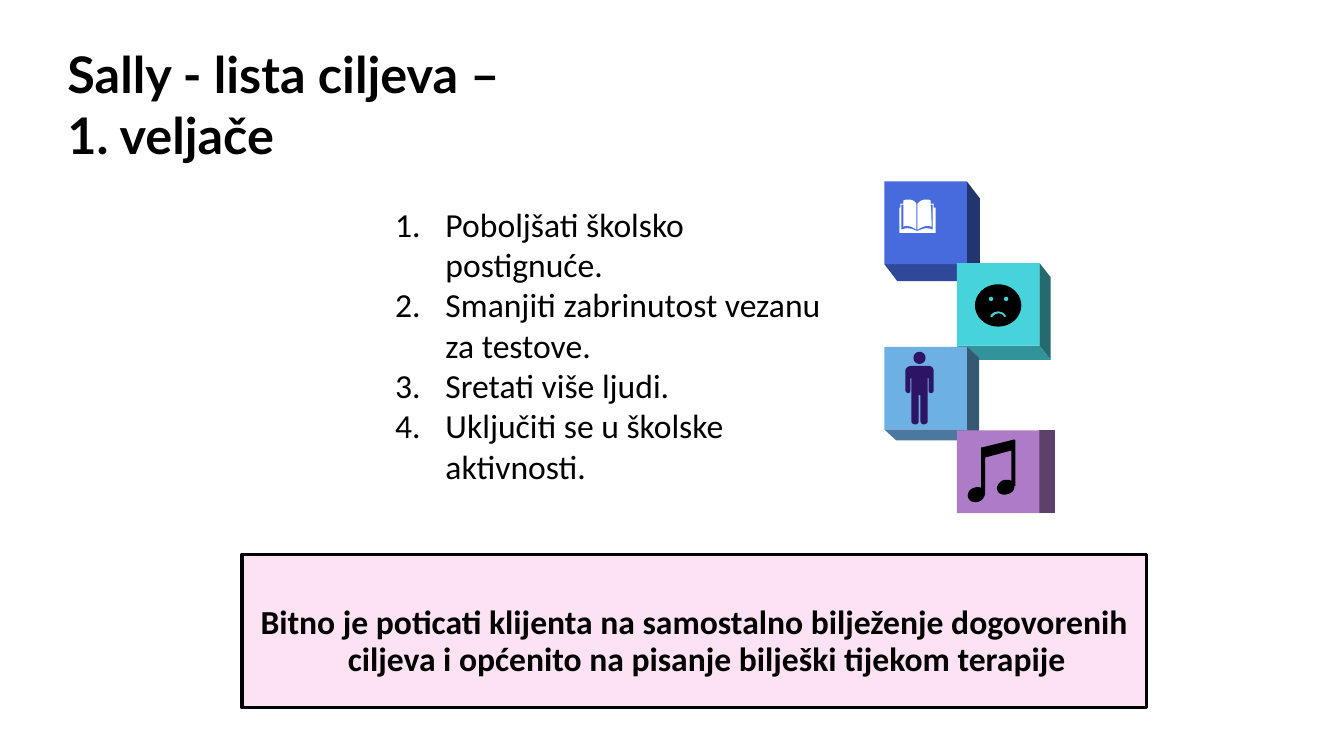
from math import cos, pi, sin

from lxml import etree
from pptx import Presentation
from pptx.dml.color import RGBColor
from pptx.enum.shapes import MSO_SHAPE
from pptx.enum.text import MSO_ANCHOR, PP_ALIGN
from pptx.oxml.ns import qn
from pptx.util import Inches, Pt

RECTANGLE = MSO_SHAPE.RECTANGLE
CENTER = PP_ALIGN.CENTER
MIDDLE = MSO_ANCHOR.MIDDLE

BLACK = RGBColor(0x00, 0x00, 0x00)
WHITE = RGBColor(0xFF, 0xFF, 0xFF)
PINK = RGBColor(0xFC, 0xE2, 0xF3)
INDIGO = RGBColor(0x2D, 0x14, 0x64)
BLUE = RGBColor(0x47, 0x6A, 0xDD)
BLUE_SIDE = RGBColor(0x22, 0x35, 0x6E)
BLUE_BASE = RGBColor(0x30, 0x48, 0x9A)
TEAL = RGBColor(0x47, 0xD3, 0xDC)
TEAL_SIDE = RGBColor(0x24, 0x6A, 0x6E)
TEAL_BASE = RGBColor(0x32, 0x94, 0x9A)
SKY = RGBColor(0x6D, 0xB0, 0xE4)
SKY_SIDE = RGBColor(0x36, 0x58, 0x72)
SKY_BASE = RGBColor(0x4A, 0x78, 0x9E)
PURPLE = RGBColor(0xAE, 0x7B, 0xC9)
PURPLE_SIDE = RGBColor(0x5C, 0x41, 0x6A)

CUBE_SIZE = 0.82
UNITS_PER_INCH = 1000
CURVE_STEPS = 8

GOALS = [
    "Poboljšati školsko postignuće.",
    "Smanjiti zabrinutost vezanu za testove.",
    "Sretati više ljudi.",
    "Uključiti se u školske aktivnosti.",
]


# Outlines, in hundredths of an inch: pairs are corners, sixes are Bézier curves
def ellipse(center_x, center_y, radius_x, radius_y, steps=48):
    angles = [2 * pi * step / steps for step in range(steps)]
    return [(center_x + radius_x * cos(a), center_y + radius_y * sin(a)) for a in angles]


BOOK = [[
    (17, 31), (18, 31), (24, 29, 27, 27, 33, 30), (33, 5), (31, 5),
    (32, 13, 32, 20, 32, 27), (27, 25, 23, 27, 18, 30), (18, 4),
    (21, 1, 23, 0, 27, 0), (28, 0, 30, 0, 31, 1), (31, 4), (34, 4), (34, 8),
    (36, 8), (36, 33), (0, 33), (0, 8), (1, 8), (1, 4), (4, 4), (4, 1),
    (6, 0, 8, 0, 9, 0), (12, 0, 15, 1, 17, 4), (17, 30),
    (13, 27, 8, 25, 4, 27), (4, 5), (2, 5), (2, 30), (8, 27, 12, 29, 17, 31),
]]
SAD_FACE = [
    ellipse(23, 21, 23, 21),
    ellipse(16, 14.5, 2.2, 2.2),
    ellipse(31, 14.5, 2.2, 2.2),
    [(23, 27), (19, 27, 16, 29, 15, 32), (17, 33), (18, 31, 21, 29, 23, 29),
     (26, 29, 28, 30, 29, 33), (31, 32), (30, 29, 27, 27, 23, 27)],
]
PERSON = [
    [(6, 14), (23, 14), (26, 14, 28, 16, 28, 19), (28, 38),
     (28, 40, 27, 41, 25, 41), (24, 41, 23, 40, 23, 38), (23, 26), (22, 26),
     (22, 69), (22, 71, 20, 72, 18, 72), (17, 72, 15, 71, 15, 69), (15, 43),
     (13, 43), (13, 69), (13, 71, 12, 72, 10, 72), (8, 72, 6, 71, 6, 69),
     (6, 26), (5, 26), (5, 38), (5, 40, 4, 41, 3, 41),
     (2, 41, 0, 40, 0, 38), (0, 19), (0, 16, 3, 14, 6, 14)],
    ellipse(14, 6, 6, 6),
]
MUSIC_NOTE = [[
    (47, 0), (48, 1), (48, 46), (47, 46), (48, 49, 45, 53, 41, 54),
    (36, 56, 31, 54, 30, 50), (29, 46, 32, 42, 37, 40),
    (39, 40, 42, 40, 44, 41), (44, 11), (18, 18), (18, 53),
    (18, 57, 15, 61, 11, 62), (6, 63, 2, 61, 1, 57), (0, 53, 3, 49, 7, 48),
    (10, 47, 12, 47, 14, 48), (14, 8), (15, 8),
]]

# Cubes: left, top, depth right, depth down, front, side and base colour,
# then the icon with its offset and colour
CUBES = [
    (8.77, 1.8, 0.13, 0.17, BLUE, BLUE_SIDE, BLUE_BASE, BOOK, 0.15, 0.18, WHITE),
    (9.49, 2.61, 0.11, 0.14, TEAL, TEAL_SIDE, TEAL_BASE, SAD_FACE, 0.18, 0.21, BLACK),
    (8.77, 3.44, 0.12, 0.11, SKY, SKY_SIDE, SKY_BASE, PERSON, 0.21, 0.05, INDIGO),
    (9.49, 4.27, 0.15, 0, PURPLE, PURPLE_SIDE, PURPLE_SIDE, MUSIC_NOTE, 0.1, 0.09, BLACK),
]


def flatten(contour):
    """Turn a contour of corners and curves into plain points."""
    points = [contour[0]]
    for part in contour[1:]:
        if len(part) == 2:
            points.append(part)
            continue
        x0, y0 = points[-1]
        x1, y1, x2, y2, x3, y3 = part
        for step in range(1, CURVE_STEPS + 1):
            t = step / CURVE_STEPS
            a, b, c, d = (1 - t) ** 3, 3 * t * (1 - t) ** 2, 3 * t * t * (1 - t), t ** 3
            points.append((a * x0 + b * x1 + c * x2 + d * x3,
                           a * y0 + b * y1 + c * y2 + d * y3))
    return points


def paint(shape, color):
    shape.shadow.inherit = False
    shape.fill.solid()
    shape.fill.fore_color.rgb = color
    shape.line.fill.background()


def add_outline(slide, left, top, contours, color):
    factor = UNITS_PER_INCH / 100
    builder = None
    for contour in contours:
        points = [(x * factor, y * factor) for x, y in flatten(contour)]
        if builder is None:
            builder = slide.shapes.build_freeform(*points[0], scale=Inches(1) / UNITS_PER_INCH)
        else:
            builder.move_to(*points[0])
        builder.add_line_segments(points[1:], close=True)
    paint(builder.convert_to_shape(Inches(left), Inches(top)), color)


def format_runs(paragraph, font_name, size, bold=False):
    for run in paragraph.runs:
        run.font.name = font_name
        run.font.size = Pt(size)
        run.font.bold = bold
        run.font.color.rgb = BLACK


def set_hanging_indent(paragraph, indent):
    properties = paragraph._p.get_or_add_pPr()
    properties.set("marL", str(Inches(indent)))
    properties.set("indent", str(-Inches(indent)))
    return properties


def add_text_box(slide, left, top, width, height, lines):
    box = slide.shapes.add_textbox(Inches(left), Inches(top), Inches(width), Inches(height))
    box.text_frame.word_wrap = True
    box.text_frame.text = "\n".join(lines)
    return box.text_frame.paragraphs


def add_title(slide, left, top, width, height):
    lines = ["Sally - lista ciljeva –", "1. veljače"]
    for paragraph in add_text_box(slide, left, top, width, height, lines):
        format_runs(paragraph, "Lato", 36, bold=True)


def add_goal_list(slide, left, top, width, height):
    for paragraph in add_text_box(slide, left, top, width, height, GOALS):
        properties = set_hanging_indent(paragraph, 0.5)
        etree.SubElement(properties, qn("a:buAutoNum"), type="arabicPeriod")
        format_runs(paragraph, "Calibri", 24)


def add_cube(slide, left, top, depth_x, depth_y, front, side, base,
             icon, icon_x, icon_y, icon_color):
    size, dx, dy = CUBE_SIZE * 100, depth_x * 100, depth_y * 100
    # Side and base faces
    side_face = [(size, 0), (size + dx, dy), (size + dx, size + dy), (size, size)]
    add_outline(slide, left, top, [side_face], side)
    if depth_y:
        base_face = [(0, size), (size, size), (size + dx, size + dy), (dx, size + dy)]
        add_outline(slide, left, top, [base_face], base)
    # Front face and icon
    face = slide.shapes.add_shape(RECTANGLE, Inches(left), Inches(top),
                                  Inches(CUBE_SIZE), Inches(CUBE_SIZE))
    paint(face, front)
    add_outline(slide, left + icon_x, top + icon_y, icon, icon_color)


def add_advice(slide, left, top, width, height):
    shape = slide.shapes.add_shape(RECTANGLE, Inches(left), Inches(top),
                                   Inches(width), Inches(height))
    paint(shape, PINK)
    shape.line.color.rgb = BLACK
    shape.line.width = Pt(2.25)
    frame = shape.text_frame
    frame.word_wrap = True
    frame.vertical_anchor = MIDDLE
    frame.margin_top = Inches(0.27)
    frame.text = ("Bitno je poticati klijenta na samostalno bilježenje dogovorenih "
                  "ciljeva i općenito na pisanje bilješki tijekom terapije")
    paragraph = frame.paragraphs[0]
    set_hanging_indent(paragraph, 0.25)
    paragraph.alignment = CENTER
    paragraph.line_spacing = 0.9
    format_runs(paragraph, "Calibri", 24, bold=True)


def main():
    presentation = Presentation()
    presentation.slide_width = Inches(13.33)
    presentation.slide_height = Inches(7.5)
    slide = presentation.slides.add_slide(presentation.slide_layouts[6])
    add_title(slide, 0.57, 0.38, 5.81, 1.31)
    add_goal_list(slide, 3.82, 1.97, 4.55, 3.74)
    for cube in CUBES:
        add_cube(slide, *cube)
    add_advice(slide, 2.4, 5.5, 8.97, 1.52)
    presentation.save("out.pptx")


if __name__ == "__main__":
    main()
